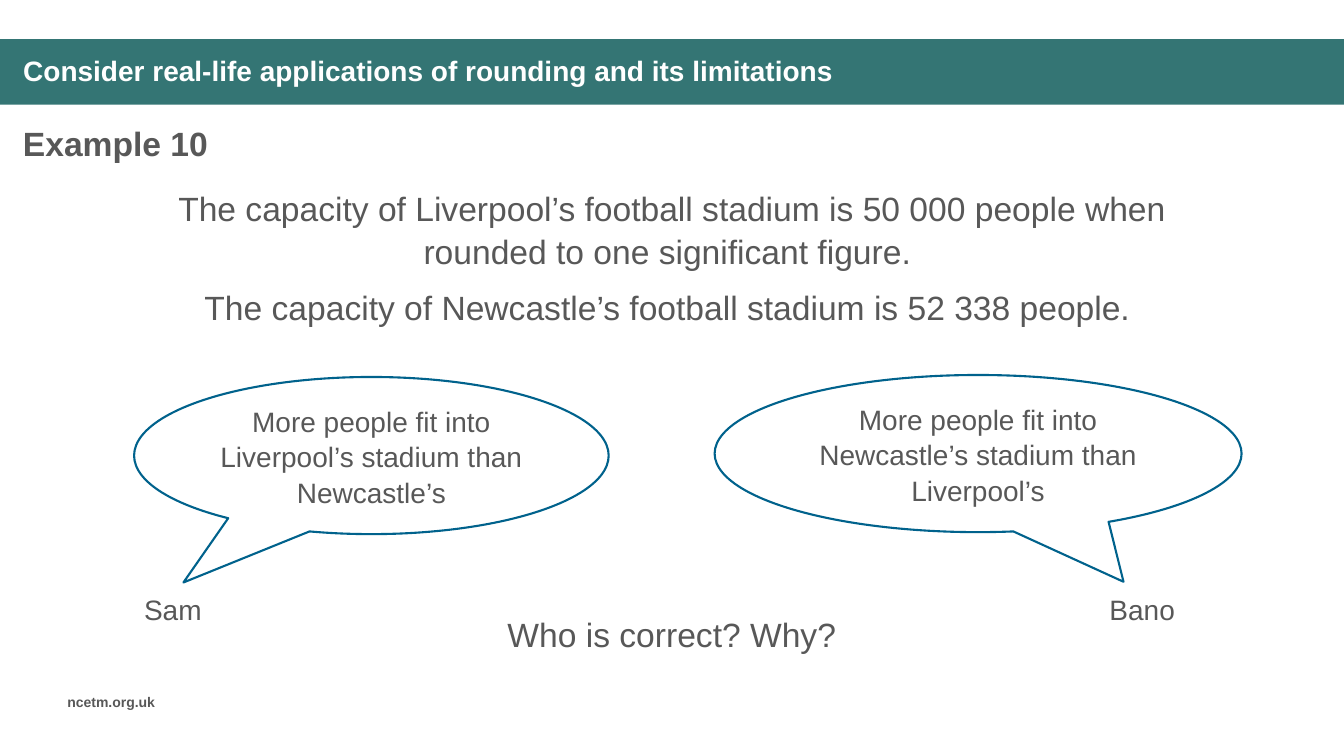
import dataclasses
import pptx
import pptx.dml.color
import pptx.enum.shapes
import pptx.enum.text
import pptx.util

Cm = pptx.util.Cm
Pt = pptx.util.Pt
Align = pptx.enum.text.PP_ALIGN
Anchor = pptx.enum.text.MSO_ANCHOR
Preset = pptx.enum.shapes.MSO_SHAPE


@dataclasses.dataclass(frozen=True)
class Theme:
    font: str = "Arial"
    band: str = "347574"
    outline: str = "00628C"
    ink: str = "585858"
    light: str = "FFFFFF"
    large: int = 24
    medium: int = 20
    small: int = 10
    leading: float = 1.06


THEME = Theme()


def color(code):
    return pptx.dml.color.RGBColor.from_string(code)


def write(frame, *lines, size=THEME.medium, ink=THEME.ink, bold=False,
          align=Align.LEFT, anchor=Anchor.TOP, leading=THEME.leading,
          before=0, after=0):
    frame.word_wrap = True
    frame.auto_size = pptx.enum.text.MSO_AUTO_SIZE.NONE
    frame.vertical_anchor = anchor
    for index, line in enumerate(lines):
        para = frame.add_paragraph() if index else frame.paragraphs[0]
        para.alignment = align
        para.line_spacing = leading
        para.space_before = Pt(before if index else 0)
        para.space_after = Pt(after)
        span = para.add_run()
        span.text = line
        span.font.name = THEME.font
        span.font.size = Pt(size)
        span.font.bold = bold
        span.font.color.rgb = color(ink)


class Page:
    def __init__(self, deck, theme):
        self.theme = theme
        self.slide = deck.slides.add_slide(deck.slide_layouts[5])
        self.shapes = self.slide.shapes

    def band(self, left, top, width, height):
        bar = self.shapes.add_shape(
            Preset.RECTANGLE, Cm(left), Cm(top), Cm(width), Cm(height))
        bar.shadow.inherit = False
        bar.fill.solid()
        bar.fill.fore_color.rgb = color(self.theme.band)
        bar.line.fill.background()

    def title(self, text, left, top, width, height):
        title = self.shapes.title
        title.left, title.top = Cm(left), Cm(top)
        title.width, title.height = Cm(width), Cm(height)
        write(title.text_frame, text, ink=self.theme.light, bold=True,
              anchor=Anchor.MIDDLE, leading=0.9)
        self.shapes._spTree.append(title._element)

    def text(self, left, top, width, height, *lines, **style):
        box = self.shapes.add_textbox(Cm(left), Cm(top), Cm(width), Cm(height))
        write(box.text_frame, *lines, **style)

    def speech(self, left, top, width, height, tip, text):
        bubble = self.shapes.add_shape(
            Preset.OVAL_CALLOUT, Cm(left), Cm(top), Cm(width), Cm(height))
        bubble.adjustments[0], bubble.adjustments[1] = tip
        bubble.shadow.inherit = False
        bubble.fill.background()
        bubble.line.color.rgb = color(self.theme.outline)
        bubble.line.width = Pt(1.5)
        write(bubble.text_frame, text, align=Align.CENTER, anchor=Anchor.MIDDLE)


def main():
    deck = pptx.Presentation()
    deck.slide_width, deck.slide_height = Cm(33.87), Cm(19.05)
    page = Page(deck, THEME)
    large = {"size": THEME.large}
    centred = {"size": THEME.large, "align": Align.CENTER}

    page.band(0, 0.99, 33.87, 1.65)
    page.text(1.45, 17.32, 3.07, 0.69, "ncetm.org.uk", size=THEME.small, bold=True)
    page.title("Consider real-life applications of rounding and its limitations",
               0.33, 1.24, 29.41, 1.19)
    page.text(0.33, 2.92, 16.92, 1.27, "Example 10", bold=True, **large)
    page.text(
        2.84, 4.55, 28.19, 4.5,
        "The capacity of Liverpool’s football stadium is 50 000 people when "
        "rounded to one significant figure. ",
        "The capacity of Newcastle’s football stadium is 52 338 people. ",
        before=4, after=6, **centred)

    page.speech(3.38, 9.5, 11.96, 3.96, (-0.396, 0.808),
                "More people fit into Liverpool’s stadium than Newcastle’s")
    page.speech(18.01, 9.45, 13.28, 3.96, (0.276, 0.816),
                "More people fit into Newcastle’s stadium than Liverpool’s")
    for speaker, left in (("Sam", 3.38), ("Bano", 27.71)):
        page.text(left, 14.76, 2.79, 1.12, speaker)
    page.text(8.46, 15.29, 16.94, 1.27, "Who is correct? Why?", **centred)

    deck.save("out.pptx")


if __name__ == "__main__":
    main()
